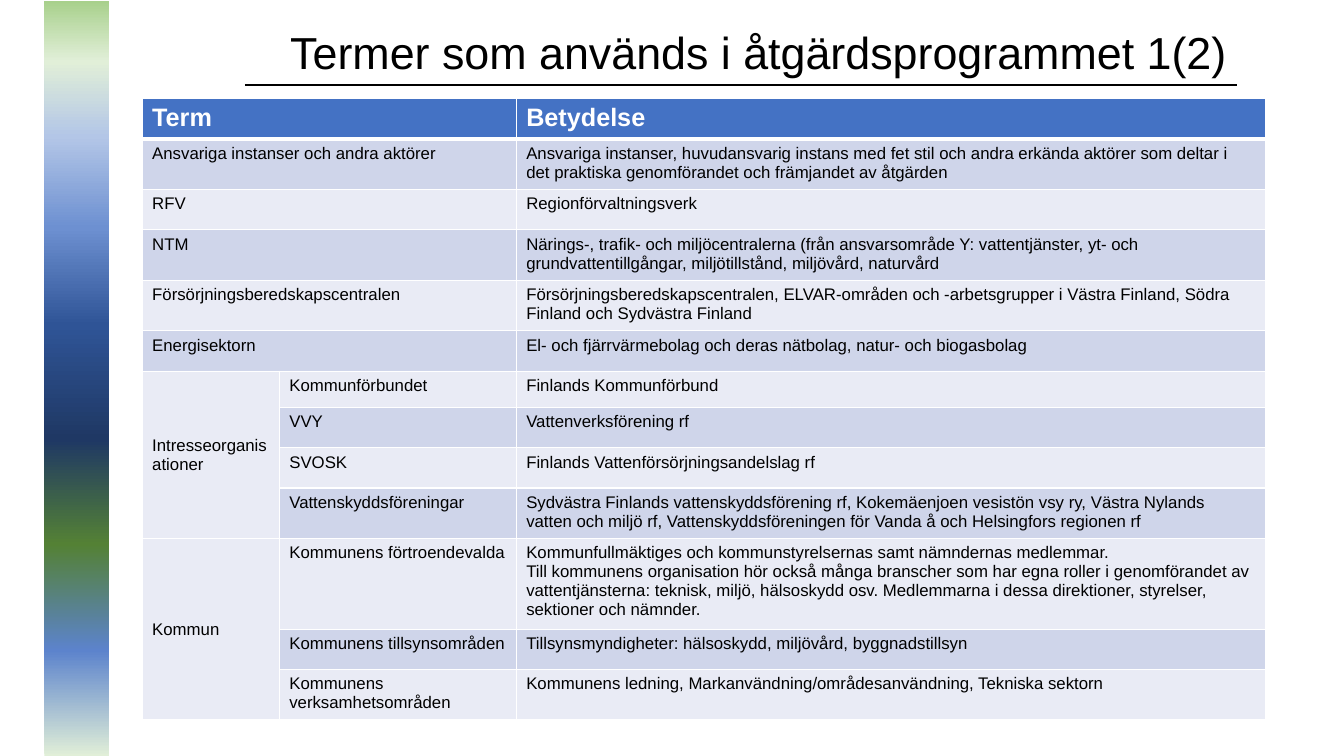
from lxml import etree
from pptx import Presentation
from pptx.dml.color import RGBColor
from pptx.enum import shapes, text
from pptx.oxml.ns import qn
from pptx.util import Inches, Pt

FONT = "Arial"
BLACK = RGBColor(0x00, 0x00, 0x00)
WHITE = RGBColor(0xFF, 0xFF, 0xFF)
HEADER_BLUE = RGBColor(0x44, 0x72, 0xC4)
BANDS = [RGBColor(0xCF, 0xD5, 0xEA), RGBColor(0xE9, 0xEB, 0xF5)]

# Gradient of the side band, from bottom to top: percent and colour
SIDE_STOPS = [
    (0, RGBColor(0xE1, 0xEF, 0xD8)), (14, RGBColor(0x5C, 0x83, 0xCC)),
    (28, RGBColor(0x54, 0x81, 0x35)), (42, RGBColor(0x1F, 0x38, 0x64)),
    (57, RGBColor(0x2F, 0x54, 0x96)), (70, RGBColor(0x6D, 0x90, 0xD1)),
    (82, RGBColor(0xB3, 0xC6, 0xE7)), (92, RGBColor(0xE1, 0xEF, 0xD8)),
    (100, RGBColor(0xA8, 0xD0, 0x8C)),
]

COL_WIDTHS = [1.36, 2.35, 7.43]
ROW_HEIGHT = 0.4
SHORT_ROW, SHORT_HEIGHT = 6, 0.36

# Group, term, meaning; without a group the term spans two columns
ROWS = [
    ("", "Term", "Betydelse"),
    ("", "Ansvariga instanser och andra aktörer",
     "Ansvariga instanser, huvudansvarig instans med fet stil och andra erkända "
     "aktörer som deltar i det praktiska genomförandet och främjandet av åtgärden"),
    ("", "RFV", "Regionförvaltningsverk"),
    ("", "NTM",
     "Närings-, trafik- och miljöcentralerna (från ansvarsområde Y: vattentjänster, "
     "yt- och grundvattentillgångar, miljötillstånd, miljövård, naturvård"),
    ("", "Försörjningsberedskapscentralen",
     "Försörjningsberedskapscentralen, ELVAR-områden och -arbetsgrupper i "
     "Västra Finland, Södra Finland och Sydvästra Finland"),
    ("", "Energisektorn",
     "El- och fjärrvärmebolag och deras nätbolag, natur- och biogasbolag"),
    ("Intresseorganisationer", "Kommunförbundet", "Finlands Kommunförbund"),
    ("Intresseorganisationer", "VVY", "Vattenverksförening rf"),
    ("Intresseorganisationer", "SVOSK", "Finlands Vattenförsörjningsandelslag rf"),
    ("Intresseorganisationer", "Vattenskyddsföreningar",
     "Sydvästra Finlands vattenskyddsförening rf, Kokemäenjoen vesistön vsy ry, "
     "Västra Nylands vatten och miljö rf, Vattenskyddsföreningen för Vanda å och "
     "Helsingfors regionen rf"),
    ("Kommun", "Kommunens förtroendevalda",
     "Kommunfullmäktiges och kommunstyrelsernas samt nämndernas medlemmar.\n"
     "Till kommunens organisation hör också många branscher som har egna roller i "
     "genomförandet av vattentjänsterna: teknisk, miljö, hälsoskydd osv. "
     "Medlemmarna i dessa direktioner, styrelser, sektioner och nämnder."),
    ("Kommun", "Kommunens tillsynsområden",
     "Tillsynsmyndigheter: hälsoskydd, miljövård, byggnadstillsyn"),
    ("Kommun", "Kommunens verksamhetsområden",
     "Kommunens ledning, Markanvändning/områdesanvändning, Tekniska sektorn"),
]


def set_text(tf, content, size, color, bold=False):
    tf.text = content
    for p in tf.paragraphs:
        p.font.name = FONT
        p.font.size = Pt(size)
        p.font.color.rgb = color
        p.font.bold = bold


def add_title(s, content):
    sp = s.shapes.add_textbox(Inches(2.78), Inches(0.2), Inches(9.62), Inches(0.64))
    sp.text_frame.word_wrap = True
    set_text(sp.text_frame, content, 32, BLACK)


def add_rule(s, x1, x2, y):
    line = s.shapes.add_connector(shapes.MSO_CONNECTOR.STRAIGHT,
                                  Inches(x1), Inches(y), Inches(x2), Inches(y))
    line.line.color.rgb = BLACK
    line.line.width = Pt(1.5)
    etree.SubElement(line._element.spPr, qn("a:effectLst"))


def add_side_band(s):
    sp = s.shapes.add_shape(shapes.MSO_SHAPE.RECTANGLE,
                            Inches(0.44), Inches(0.01), Inches(0.64), Inches(7.49))
    sp.shadow.inherit = False
    sp.line.fill.background()
    sp.fill.gradient()
    sp.fill.gradient_angle = 90
    stops = sp._element.spPr.find(".//" + qn("a:gsLst"))
    for stop in list(stops):
        stops.remove(stop)
    for percent, color in SIDE_STOPS:
        stop = etree.SubElement(stops, qn("a:gs"), pos=str(percent * 1000))
        etree.SubElement(stop, qn("a:srgbClr"), val=str(color))


def set_borders(cell, bottom, top):
    tc_pr = cell._tc.get_or_add_tcPr()
    widths = {"a:lnL": 1, "a:lnR": 1, "a:lnT": top, "a:lnB": bottom}
    for i, (tag, width) in enumerate(widths.items()):
        ln = etree.Element(qn(tag), w=str(Pt(width)))
        fill = etree.SubElement(ln, qn("a:solidFill"))
        etree.SubElement(fill, qn("a:srgbClr"), val=str(WHITE))
        tc_pr.insert(i, ln)  # borders come before the fill


def add_terms_table(s):
    heights = [SHORT_HEIGHT if i == SHORT_ROW else ROW_HEIGHT for i in range(len(ROWS))]
    table = s.shapes.add_table(len(ROWS), len(COL_WIDTHS), Inches(1.41), Inches(0.98),
                               Inches(sum(COL_WIDTHS)), Inches(sum(heights))).table
    for col, width in zip(table.columns, COL_WIDTHS):
        col.width = Inches(width)
    for row, height in zip(table.rows, heights):
        row.height = Inches(height)

    # Fills and borders
    for i, row in enumerate(table.rows):
        for cell in row.cells:
            cell.fill.solid()
            cell.fill.fore_color.rgb = BANDS[(i - 1) % 2] if i else HEADER_BLUE
            set_borders(cell, bottom=1 if i else 3, top=3 if i == 1 else 1)

    # Terms, meanings and merged cells
    groups = [row[0] for row in ROWS]
    for i, (group, term, meaning) in enumerate(ROWS):
        style = (12, BLACK) if i else (18, WHITE, True)
        set_text(table.cell(i, 1 if group else 0).text_frame, term, *style)
        set_text(table.cell(i, 2).text_frame, meaning, *style)
        if not group:
            table.cell(i, 0).merge(table.cell(i, 1))
        elif groups.index(group) == i:
            cell = table.cell(i, 0)
            set_text(cell.text_frame, group, *style)
            cell.vertical_anchor = text.MSO_ANCHOR.MIDDLE
            cell.merge(table.cell(i + groups.count(group) - 1, 0))


def main():
    prs = Presentation()
    prs.slide_width, prs.slide_height = Inches(13.33), Inches(7.5)
    s = prs.slides.add_slide(prs.slide_layouts[6])
    add_title(s, "Termer som används i åtgärdsprogrammet 1(2)")
    add_rule(s, 2.43, 12.27, 0.84)
    add_side_band(s)
    add_terms_table(s)
    prs.save("out.pptx")


if __name__ == "__main__":
    main()
